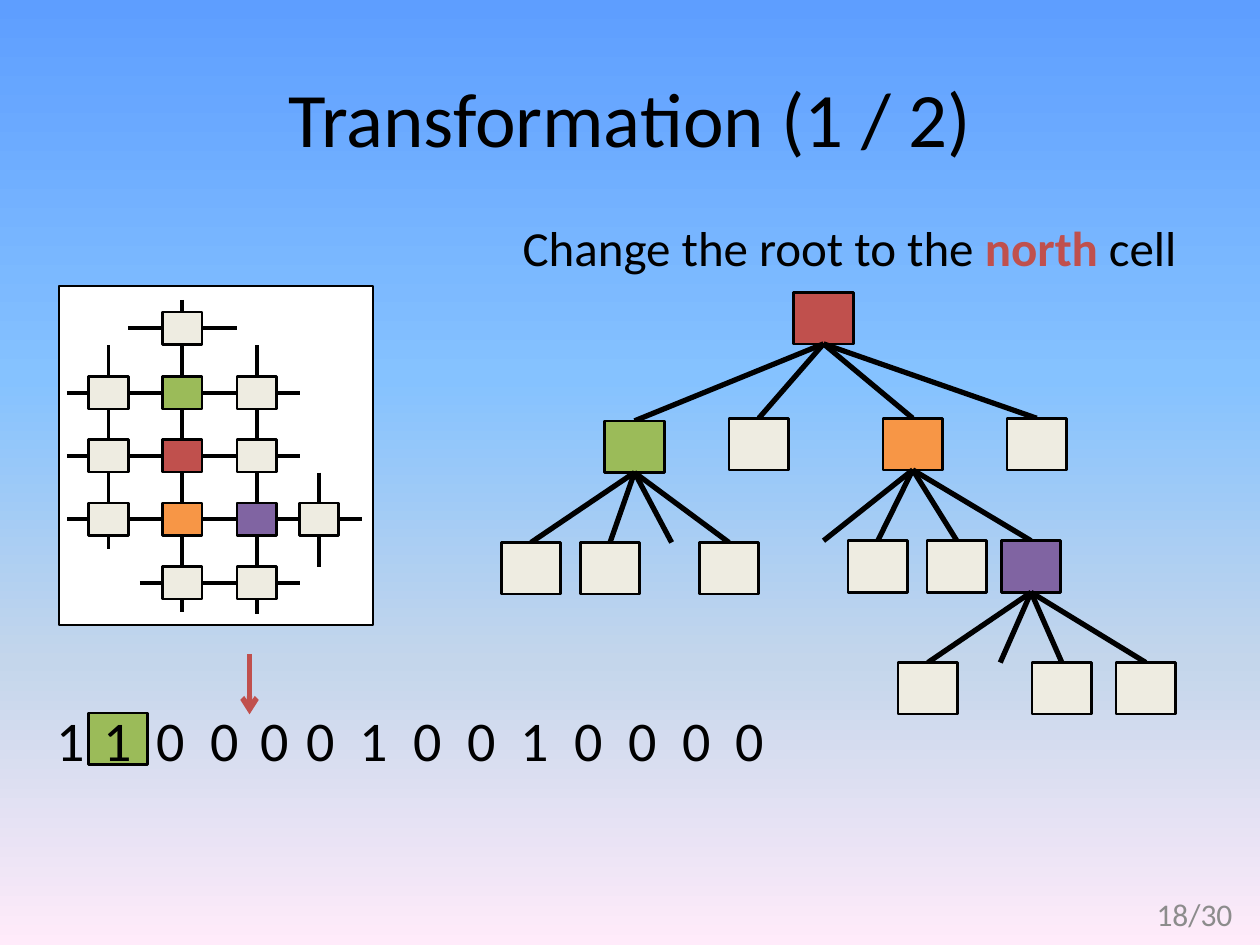
from lxml import etree
from pptx import Presentation
from pptx.dml.color import RGBColor
from pptx.enum import shapes, text
from pptx.oxml.ns import qn
from pptx.util import Pt

BLACK = RGBColor(0x00, 0x00, 0x00)
WHITE = RGBColor(0xFF, 0xFF, 0xFF)
GRAY = RGBColor(0x8C, 0x8C, 0x8C)
CREAM = RGBColor(0xEE, 0xEC, 0xE1)
RED = RGBColor(0xC0, 0x50, 0x4D)
GREEN = RGBColor(0x9B, 0xBB, 0x59)
ORANGE = RGBColor(0xF7, 0x96, 0x46)
PURPLE = RGBColor(0x80, 0x64, 0xA2)
SKY = [(0, RGBColor(0x5E, 0x9E, 0xFF)), (40, RGBColor(0x85, 0xC2, 0xFF)),
       (70, RGBColor(0xC4, 0xD6, 0xEB)), (100, RGBColor(0xFF, 0xEB, 0xFA))]

prs = Presentation()
prs.slide_width, prs.slide_height = Pt(720), Pt(540)
s = prs.slides.add_slide(prs.slide_layouts[5])


def add_box(x, y, w, h, color):
    sp = s.shapes.add_shape(shapes.MSO_SHAPE.RECTANGLE, Pt(x), Pt(y), Pt(w), Pt(h))
    sp.shadow.inherit = False
    sp.fill.solid()
    sp.fill.fore_color.rgb = color
    sp.line.color.rgb = BLACK
    sp.line.width = Pt(1.5)


def add_line(x1, y1, x2, y2, width, color=BLACK):
    ln = s.shapes.add_connector(shapes.MSO_CONNECTOR.STRAIGHT, Pt(x1), Pt(y1), Pt(x2), Pt(y2))
    ln.line.color.rgb = color
    ln.line.width = Pt(width)
    etree.SubElement(ln._element.spPr, qn("a:effectLst"))
    return ln


# Background gradient, top to bottom
fill = s.background.fill
fill.gradient()
fill.gradient_angle = 270
stops = s.element.find(".//" + qn("a:gsLst"))
stops.clear()
for pos, color in SKY:
    gs = etree.SubElement(stops, qn("a:gs"), pos=str(pos * 1000))
    etree.SubElement(gs, qn("a:srgbClr"), val=str(color))

# Title
title = s.shapes.title
title.left, title.top, title.width, title.height = Pt(36), Pt(21.6), Pt(648), Pt(90)
title.text_frame.text = "Transformation (1 / 2)"
font = title.text_frame.paragraphs[0].runs[0].font
font.name, font.size, font.color.rgb = "Calibri", Pt(44), BLACK

# Cell grid: a frame, lines between the cells, then the cells
add_box(33.8, 163.4, 179.3, 193.7, WHITE)
CELL_W, CELL_H = 22.6, 18.7
COLS = [62, 104.2, 146.8, 182.3]
ROWS = [187.6, 224.5, 260.5, 296.8, 333]
ROW_ENDS = [(73.4, 135.4), (38.2, 171.4), (38.2, 171.4), (38.5, 206.6), (80, 171.4)]
COL_ENDS = [(197.3, 313.9), (171.4, 350), (197.3, 350.6), (270, 324)]
CELLS = {(0, 1): CREAM,
         (1, 0): CREAM, (1, 1): GREEN, (1, 2): CREAM,
         (2, 0): CREAM, (2, 1): RED, (2, 2): CREAM,
         (3, 0): CREAM, (3, 1): ORANGE, (3, 2): PURPLE, (3, 3): CREAM,
         (4, 1): CREAM, (4, 2): CREAM}

for i, (y, (start, end)) in enumerate(zip(ROWS, ROW_ENDS)):
    edges = [start]
    for row, col in CELLS:
        if row == i:
            edges += [COLS[col] - CELL_W / 2, COLS[col] + CELL_W / 2]
    edges.append(end)
    for x1, x2 in zip(edges[::2], edges[1::2]):
        add_line(x1, y, x2, y, 2.25)

for i, (x, (start, end)) in enumerate(zip(COLS, COL_ENDS)):
    edges = [start]
    for row, col in CELLS:
        if col == i:
            edges += [ROWS[row] - CELL_H / 2, ROWS[row] + CELL_H / 2]
    edges.append(end)
    for y1, y2 in zip(edges[::2], edges[1::2]):
        add_line(x, y1, x, y2, 2.25)

for (row, col), color in CELLS.items():
    add_box(COLS[col] - CELL_W / 2, ROWS[row] - CELL_H / 2, CELL_W, CELL_H, color)

# Tree: parent (centre, top), then children (centre, top, colour); None is an open branch
NODE_W, NODE_H = 34, 29.5
add_box(470.6 - NODE_W / 2, 167, NODE_W, NODE_H, RED)
BRANCHES = [
    (470.6, 167, [(362.6, 240.5, GREEN), (433.6, 239, CREAM),
                  (521.6, 239, ORANGE), (592.4, 239, CREAM)]),
    (362.6, 240.5, [(303.4, 310, CREAM), (348.6, 310, CREAM),
                    (383.8, 310, None), (416.6, 310, CREAM)]),
    (521.6, 239, [(470.6, 309, None), (501.6, 309, CREAM),
                  (546.8, 309, CREAM), (589.2, 309, PURPLE)]),
    (589.2, 309, [(530.2, 378.6, CREAM), (571.6, 378.6, None),
                  (606.8, 378.6, CREAM), (654.8, 378.6, CREAM)]),
]
for px, py, children in BRANCHES:
    for x, y, color in children:
        add_line(px, py + NODE_H, x, y, 3)
        if color is not None:
            add_box(x - NODE_W / 2, y, NODE_W, NODE_H, color)

# Marker behind the current bit, and the arrow above the bits
add_box(50.4, 407.5, NODE_W, NODE_H, GREEN)
arrow = add_line(142.6, 373.7, 142.6, 408.2, 3, RED)
etree.SubElement(arrow.line._get_or_add_ln(), qn("a:tailEnd"), type="arrow")

# Bit string, caption and page number: box, size, alignment, runs
LEFT, RIGHT = text.PP_ALIGN.LEFT, text.PP_ALIGN.RIGHT
LABELS = [
    (25.2, 399.6, 29.5, 46, 32, LEFT, [("1", BLACK)]),
    (51.8, 399.6, 97.2, 46, 32, LEFT, [("1\t0\t0", BLACK)]),
    (141.8, 399.6, 35.3, 46, 32, LEFT, [("0", BLACK)]),
    (167.8, 399.6, 288.7, 46, 32, LEFT, [("0\t1\t0\t0\t1\t0\t0\t0\t0", BLACK)]),
    (291.6, 121, 397.4, 41, 28, LEFT,
     [("Change the root to the ", BLACK), ("north", RED), (" cell", BLACK)]),
    (543.6, 507.6, 167.8, 28.8, 18, RIGHT, [("18/30", GRAY)]),
]
BIT_PITCH = 30.7
for x, y, w, h, size, align, runs in LABELS:
    tf = s.shapes.add_textbox(Pt(x), Pt(y), Pt(w), Pt(h)).text_frame
    tf.word_wrap = True
    if align == RIGHT:
        tf.vertical_anchor = text.MSO_ANCHOR.MIDDLE
    p = tf.paragraphs[0]
    p.alignment = align
    for words, color in runs:
        r = p.add_run()
        r.text = words
        r.font.name, r.font.size, r.font.color.rgb = "Calibri", Pt(size), color
        r.font.bold = color == RED
    tabs = runs[0][0].count("\t")
    if tabs:
        tab_list = etree.SubElement(p._p.get_or_add_pPr(), qn("a:tabLst"))
        for i in range(1, tabs + 1):
            etree.SubElement(tab_list, qn("a:tab"), pos=str(int(Pt(BIT_PITCH * i))), algn="l")

prs.save("out.pptx")
